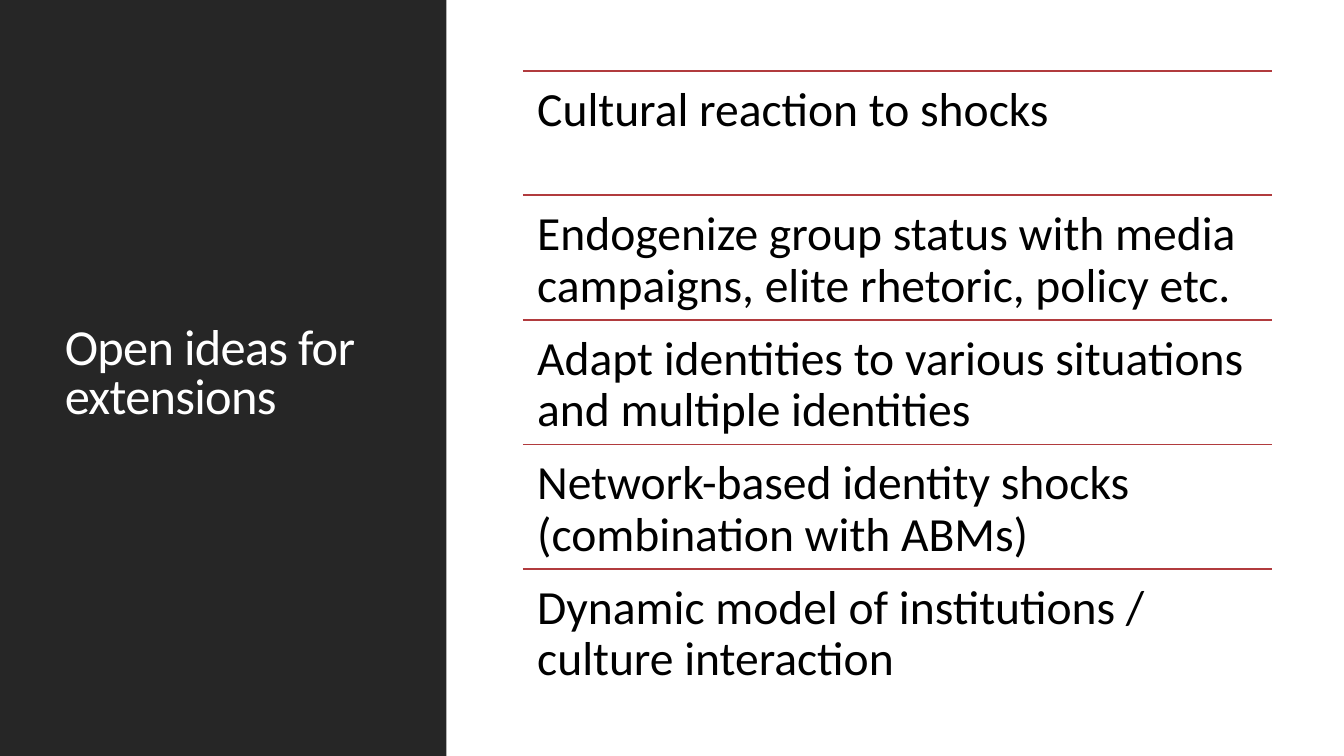
from dataclasses import dataclass

from lxml import etree
from pptx import Presentation
from pptx import util as u
from pptx.dml.color import RGBColor
from pptx.enum import shapes, text
from pptx.oxml import ns


@dataclass(frozen=True)
class Theme:
    """Colours, font and type sizes of the deck."""

    panel: RGBColor = RGBColor(0x26, 0x26, 0x26)
    rule: RGBColor = RGBColor(0xB1, 0x3B, 0x3E)
    light: RGBColor = RGBColor(0xFF, 0xFF, 0xFF)
    dark: RGBColor = RGBColor(0x00, 0x00, 0x00)
    font: str = "Calibri"
    title_size: u.Pt = u.Pt(36)
    idea_size: u.Pt = u.Pt(34)
    rule_width: u.Pt = u.Pt(1.25)


THEME = Theme()
IDEAS = [
    "Cultural reaction to shocks",
    "Endogenize group status with media campaigns, elite rhetoric, policy etc.",
    "Adapt identities to various situations and multiple identities",
    "Network-based identity shocks (combination with ABMs)",
    "Dynamic model of institutions / culture interaction",
]


def apply(target, values):
    """Set every attribute named in values on the target."""
    for name, value in values.items():
        setattr(target, name, value)


def write(box, words, size, colour, frame_format, para_format):
    """Fill a box with one formatted paragraph and return its run."""
    frame = box.text_frame
    apply(frame, {"word_wrap": True, "auto_size": text.MSO_AUTO_SIZE.NONE, **frame_format})
    para = frame.paragraphs[0]
    apply(para, {"alignment": text.PP_ALIGN.LEFT, **para_format})
    span = para.add_run()
    span.text = words
    apply(span.font, {"name": THEME.font, "size": size})
    span.font.color.rgb = colour
    return span


def title_panel(page, left, top, width, height):
    """Draw the dark panel with the slide title on it."""
    panel = page.shapes.add_shape(shapes.MSO_SHAPE.RECTANGLE, left, top, width, height)
    panel.shadow.inherit = False
    panel.fill.solid()
    panel.fill.fore_color.rgb = THEME.panel
    panel.line.fill.background()

    title = page.shapes.title
    panel._element.addnext(title._element)
    apply(title, {
        "left": left + u.Cm(1.38),
        "top": top + u.Cm(1.45),
        "width": width - u.Cm(2.7),
        "height": height - u.Cm(3.02),
    })
    span = write(title, "Open ideas for extensions", THEME.title_size, THEME.light,
                 {"vertical_anchor": text.MSO_ANCHOR.MIDDLE}, {"line_spacing": 0.8})
    span._r.get_or_add_rPr().set("spc", "-50")


def idea_list(page, left, top, width, height):
    """Stack the ideas in equal rows, each under a thin rule."""
    row = height // len(IDEAS)
    inset = u.Cm(0.36)
    margins = {f"margin_{side}": inset for side in ("left", "top", "right", "bottom")}
    for index, idea in enumerate(IDEAS):
        y = top + index * row
        rule = page.shapes.add_connector(
            shapes.MSO_CONNECTOR.STRAIGHT, left, y, left + width, y)
        rule.line.color.rgb = THEME.rule
        rule.line.width = THEME.rule_width
        etree.SubElement(rule._element.spPr, ns.qn("a:effectLst"))
        box = page.shapes.add_textbox(left, y, width, row)
        write(box, idea, THEME.idea_size, THEME.dark,
              {"vertical_anchor": text.MSO_ANCHOR.TOP, **margins}, {"line_spacing": 0.9})


def main():
    """Build the slide and save the deck."""
    deck = Presentation()
    apply(deck, {"slide_width": u.Cm(33.87), "slide_height": u.Cm(19.05)})
    page = deck.slides.add_slide(deck.slide_layouts.get_by_name("Title Only"))
    title_panel(page, u.Cm(0), u.Cm(0), u.Cm(11.25), deck.slide_height)
    idea_list(page, u.Cm(13.18), u.Cm(1.78), u.Cm(18.87), u.Cm(15.7))
    deck.save("out.pptx")


if __name__ == "__main__":
    main()
